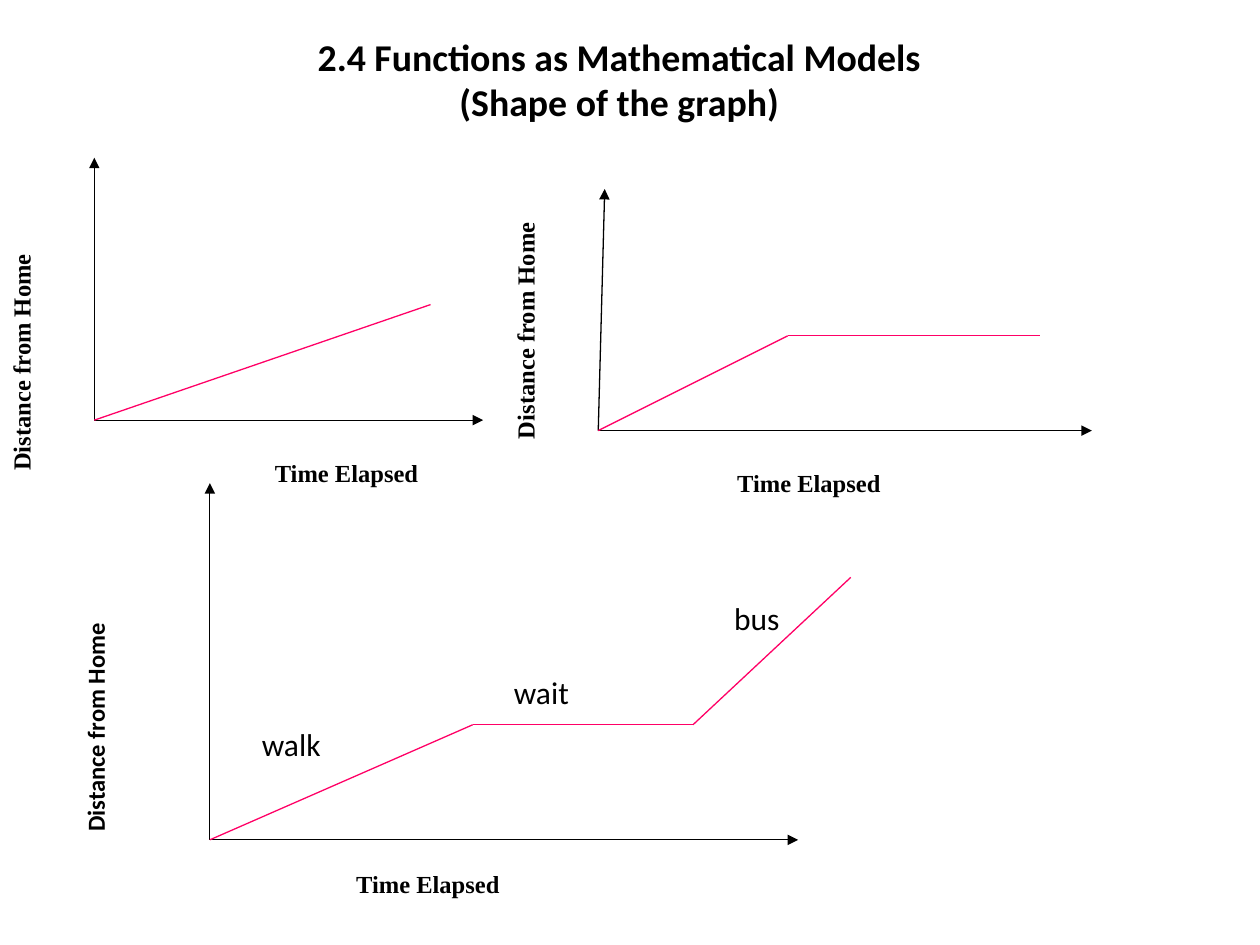
from typing import NamedTuple

from lxml import etree
from pptx import Presentation
from pptx.dml.color import RGBColor
from pptx.enum.shapes import MSO_CONNECTOR
from pptx.enum.text import MSO_ANCHOR, MSO_AUTO_SIZE, PP_ALIGN
from pptx.oxml.ns import qn
from pptx.util import Cm, Pt

STRAIGHT = MSO_CONNECTOR.STRAIGHT
TOP, MIDDLE = MSO_ANCHOR.TOP, MSO_ANCHOR.MIDDLE
LEFT, CENTER = PP_ALIGN.LEFT, PP_ALIGN.CENTER
NO_FIT, GROW = MSO_AUTO_SIZE.NONE, MSO_AUTO_SIZE.SHAPE_TO_FIT_TEXT
BLACK, PINK = "000000", "FF0066"
SANS, SERIF = "Calibri", "Times New Roman"
DISTANCE, TIME = "Distance from Home", "Time Elapsed"
HANGING = Cm(0.95)


class Point(NamedTuple):
    x: float
    y: float


class Box(NamedTuple):
    left: float
    top: float
    width: float
    height: float


class Graph(NamedTuple):
    origin: Point
    time_end: Point
    distance_end: Point
    trip: list[Point]  # corners of the curve after the origin
    time_label: Point


class Stage(NamedTuple):
    name: str
    box: Box


GRAPHS = [
    Graph(Point(1.9, 8.47), Point(9.74, 8.47), Point(1.9, 3.18),
          [Point(8.68, 6.14)], Point(5.29, 9.1)),
    Graph(Point(12.06, 8.68), Point(22.01, 8.68), Point(12.19, 3.81),
          [Point(15.88, 6.77), Point(20.96, 6.77)], Point(14.61, 9.31)),
    Graph(Point(4.23, 16.93), Point(16.09, 16.93), Point(4.23, 9.74),
          [Point(9.53, 14.61), Point(13.97, 14.61), Point(17.15, 11.64)],
          Point(6.93, 17.4)),
]
UPPER_DISTANCE_BOXES = [Box(-2.54, 5.93, 6.35, 1.27), Box(7.62, 5.29, 6.35, 1.27)]
LOWER_DISTANCE_BOX = Box(-1.33, 12.86, 6.99, 1.34)
STAGES = [
    Stage("walk", Box(5.03, 14.5, 1.78, 1.02)),
    Stage("wait", Box(10.11, 13.44, 1.65, 1.02)),
    Stage("bus", Box(14.55, 11.96, 1.52, 1.02)),
]


def color(value: str) -> RGBColor:
    return RGBColor.from_string(value)


def place(shape, box: Box) -> None:
    shape.left, shape.top, shape.width, shape.height = map(Cm, box)


def write(shape, text: str, font: str, size: float, bold: bool = True,
          align=LEFT, anchor=TOP, wrap: bool = True) -> None:
    frame = shape.text_frame
    frame.text = text
    frame.word_wrap = wrap
    frame.auto_size = NO_FIT if wrap else GROW
    frame.vertical_anchor = anchor
    paragraph = frame.paragraphs[0]
    paragraph.alignment = align
    for run in paragraph.runs:
        run.font.name = font
        run.font.size = Pt(size)
        run.font.bold = bold
        run.font.color.rgb = color(BLACK)


def write_distance(shape, box: Box, font: str) -> None:
    """Vertical axis label, read upwards, without a bullet."""
    place(shape, box)
    shape.rotation = 270
    write(shape, DISTANCE, font, 14)
    paragraph = shape.text_frame.paragraphs[0]
    paragraph.space_before = Pt(0)
    properties = paragraph._p.get_or_add_pPr()
    properties.set("marL", str(HANGING))
    properties.set("indent", str(-HANGING))
    etree.SubElement(properties, qn("a:buNone"))


def add_label(slide, text: str, box: Box, font: str, size: float, bold: bool) -> None:
    label = slide.shapes.add_textbox(*map(Cm, box))
    write(label, text, font, size, bold, wrap=False)


def add_line(slide, start: Point, end: Point, stroke: str, arrow: bool = False) -> None:
    line = slide.shapes.add_connector(STRAIGHT, *map(Cm, (*start, *end)))
    line.line.color.rgb = color(stroke)
    line.line.width = Pt(0.75)
    if arrow:
        etree.SubElement(line.line._get_or_add_ln(), qn("a:tailEnd"), type="triangle")
    etree.SubElement(line._element.spPr, qn("a:effectLst"))


def draw_graph(slide, graph: Graph) -> None:
    for axis_end in (graph.time_end, graph.distance_end):
        add_line(slide, graph.origin, axis_end, BLACK, arrow=True)
    corners = [graph.origin, *graph.trip]
    for start, end in zip(corners, corners[1:]):
        add_line(slide, start, end, PINK)
    add_label(slide, TIME, Box(*graph.time_label, 3.4, 0.84), SERIF, 14, True)


def main() -> None:
    presentation = Presentation()
    presentation.slide_width, presentation.slide_height = Cm(25.4), Cm(19.05)
    slide = presentation.slides.add_slide(presentation.slide_layouts[1])

    # Title
    heading = slide.shapes.title
    place(heading, Box(1.69, 0.64, 21.59, 1.9))
    write(heading, "2.4 Functions as Mathematical Models\v(Shape of the graph)",
          SANS, 21.6, align=CENTER, anchor=MIDDLE)

    # Distance labels
    write_distance(slide.placeholders[1], LOWER_DISTANCE_BOX, SANS)
    for box in UPPER_DISTANCE_BOXES:
        write_distance(slide.shapes.add_textbox(*map(Cm, box)), box, SERIF)

    # Graphs with their time labels
    for graph in GRAPHS:
        draw_graph(slide, graph)

    # Stages of the trip in the lower graph
    for stage in STAGES:
        add_label(slide, stage.name, stage.box, SANS, 18, False)

    presentation.save("out.pptx")


if __name__ == "__main__":
    main()
